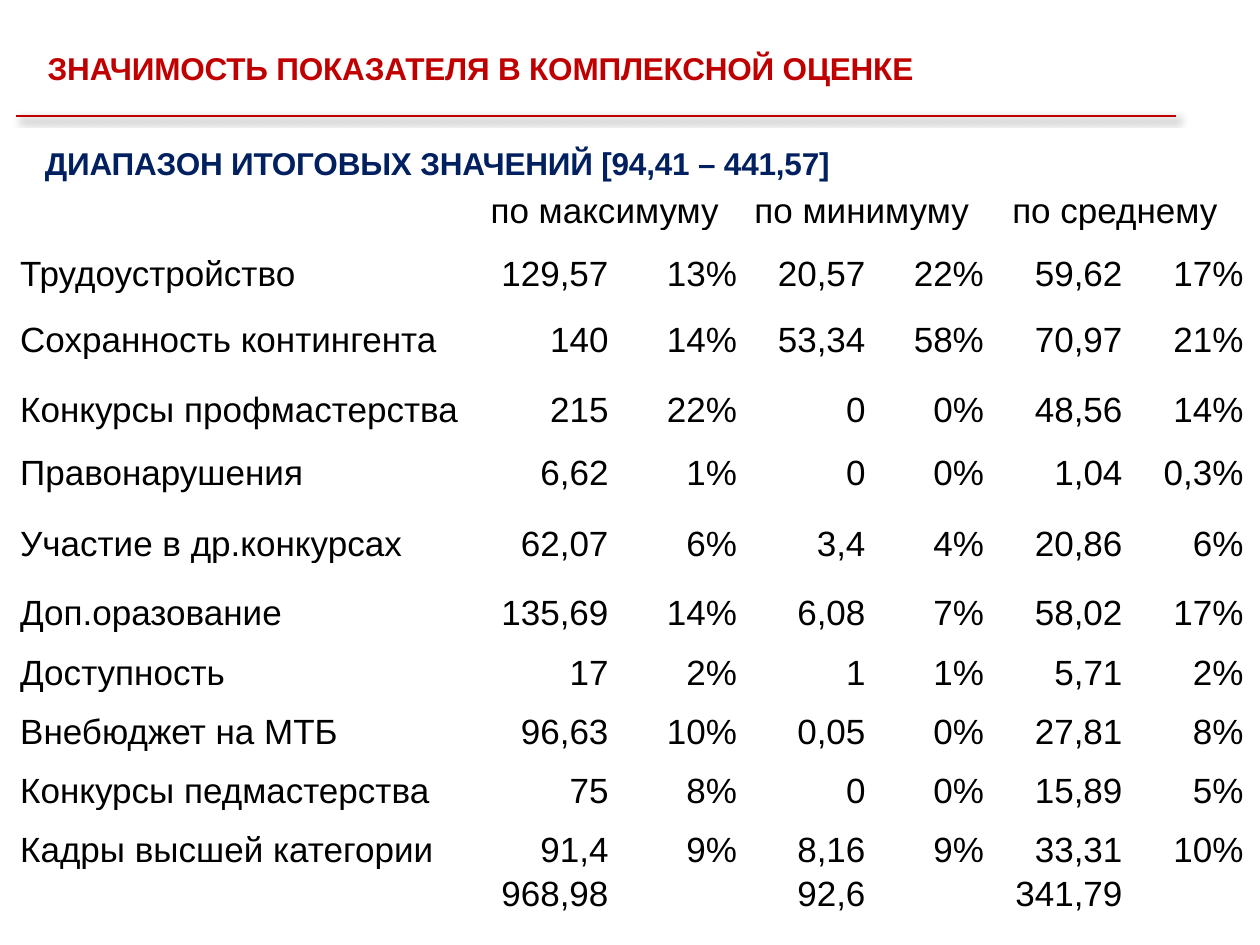
from typing import NamedTuple

from lxml.etree import SubElement
from pptx import Presentation
from pptx.dml.color import RGBColor
from pptx.enum.shapes import MSO_CONNECTOR
from pptx.enum.text import MSO_ANCHOR, MSO_AUTO_SIZE, PP_ALIGN
from pptx.oxml.ns import qn
from pptx.util import Inches, Pt

WIDTH, HEIGHT = Inches(10), Inches(7.5)
RED, NAVY, BLACK = "C00000", "002060", "000000"


class Heading(NamedTuple):
    text: str
    left: float
    top: float
    width: float
    color: str
    alignment: PP_ALIGN


class Indicator(NamedTuple):
    name: str
    values: tuple[str, ...]


HEADINGS = [
    Heading("ЗНАЧИМОСТЬ ПОКАЗАТЕЛЯ В КОМПЛЕКСНОЙ ОЦЕНКЕ", 2.8, 4.53, 89.8, RED, PP_ALIGN.LEFT),
    Heading("ДИАПАЗОН ИТОГОВЫХ ЗНАЧЕНИЙ [94,41 – 441,57]", -7.5, 14.53, 84.4, NAVY, PP_ALIGN.CENTER),
]
GROUPS = ["по максимуму", "по минимуму", "по среднему"]
INDICATORS = [
    Indicator("Трудоустройство", ("129,57", "13%", "20,57", "22%", "59,62", "17%")),
    Indicator("Сохранность контингента", ("140", "14%", "53,34", "58%", "70,97", "21%")),
    Indicator("Конкурсы профмастерства", ("215", "22%", "0", "0%", "48,56", "14%")),
    Indicator("Правонарушения", ("6,62", "1%", "0", "0%", "1,04", "0,3%")),
    Indicator("Участие в др.конкурсах", ("62,07", "6%", "3,4", "4%", "20,86", "6%")),
    Indicator("Доп.оразование", ("135,69", "14%", "6,08", "7%", "58,02", "17%")),
    Indicator("Доступность", ("17", "2%", "1", "1%", "5,71", "2%")),
    Indicator("Внебюджет на МТБ", ("96,63", "10%", "0,05", "0%", "27,81", "8%")),
    Indicator("Конкурсы педмастерства", ("75", "8%", "0", "0%", "15,89", "5%")),
    Indicator("Кадры высшей категории", ("91,4", "9%", "8,16", "9%", "33,31", "10%")),
    Indicator("", ("968,98", "", "92,6", "", "341,79", "")),
]
COLUMN_SHARES = [35.9, 11, 10.2, 10.2, 9.4, 11, 9.6]
ROW_SHARES = [4.6, 6.67, 6.93, 7.47, 6.67, 7.47, 7.33] + [6.27] * 4 + [4.6]


def across(percent: float) -> int:
    return round(WIDTH * percent / 100)


def down(percent: float) -> int:
    return round(HEIGHT * percent / 100)


def rgb(color: str) -> RGBColor:
    return RGBColor.from_string(color)


def add_run(paragraph, text: str, size: float, color: str, bold: bool = False):
    run = paragraph.add_run()
    run.text = text
    run.font.name = "Arial"
    run.font.size = Pt(size)
    run.font.bold = bold
    run.font.color.rgb = rgb(color)
    return run


def add_rule(slide) -> None:
    rule = slide.shapes.add_connector(
        MSO_CONNECTOR.STRAIGHT, across(1.3), down(12.27), across(93.3), down(12.27))
    rule.line.color.rgb = rgb(RED)
    rule.line.width = Pt(1.5)
    effects = SubElement(rule._element.spPr, qn("a:effectLst"))
    shadow = SubElement(effects, qn("a:outerShdw"), blurRad=str(Pt(4)),
                        dist=str(Pt(3)), dir="2700000", rotWithShape="0")
    shade = SubElement(shadow, qn("a:srgbClr"), val=BLACK)
    SubElement(shade, qn("a:alpha"), val="40000")


def add_heading(slide, heading: Heading) -> None:
    box = slide.shapes.add_textbox(
        across(heading.left), down(heading.top), across(heading.width), down(5.33))
    frame = box.text_frame
    frame.word_wrap = True
    frame.auto_size = MSO_AUTO_SIZE.SHAPE_TO_FIT_TEXT
    paragraph = frame.paragraphs[0]
    paragraph.alignment = heading.alignment
    run = add_run(paragraph, heading.text, 18, heading.color, bold=True)
    run._r.get_or_add_rPr().set("spc", "-10")


def fill_cell(cell, text: str, alignment: PP_ALIGN) -> None:
    cell.fill.background()
    cell.vertical_anchor = MSO_ANCHOR.BOTTOM
    cell.margin_left = cell.margin_right = cell.margin_top = Inches(0.01)
    cell.margin_bottom = 0
    if text:
        paragraph = cell.text_frame.paragraphs[0]
        paragraph.alignment = alignment
        add_run(paragraph, text, 20, BLACK)


def add_indicator_table(slide) -> None:
    table = slide.shapes.add_table(
        len(ROW_SHARES), len(COLUMN_SHARES), across(1.5), down(19.87),
        across(sum(COLUMN_SHARES)), down(sum(ROW_SHARES))).table
    table.first_row = False
    table.horz_banding = False
    for column, share in zip(table.columns, COLUMN_SHARES):
        column.width = across(share)
    for row, share in zip(table.rows, ROW_SHARES):
        row.height = down(share)

    header = [""] + [text for group in GROUPS for text in (group, "")]
    for column, text in enumerate(header):
        fill_cell(table.cell(0, column), text, PP_ALIGN.CENTER)
    for column in range(1, len(header), 2):
        table.cell(0, column).merge(table.cell(0, column + 1))

    for row, indicator in enumerate(INDICATORS, start=1):
        fill_cell(table.cell(row, 0), indicator.name, PP_ALIGN.LEFT)
        for column, value in enumerate(indicator.values, start=1):
            fill_cell(table.cell(row, column), value, PP_ALIGN.RIGHT)


def main() -> None:
    presentation = Presentation()
    presentation.slide_width, presentation.slide_height = WIDTH, HEIGHT
    slide = presentation.slides.add_slide(presentation.slide_layouts[6])
    add_rule(slide)
    for heading in HEADINGS:
        add_heading(slide, heading)
    add_indicator_table(slide)
    presentation.save("out.pptx")


if __name__ == "__main__":
    main()
